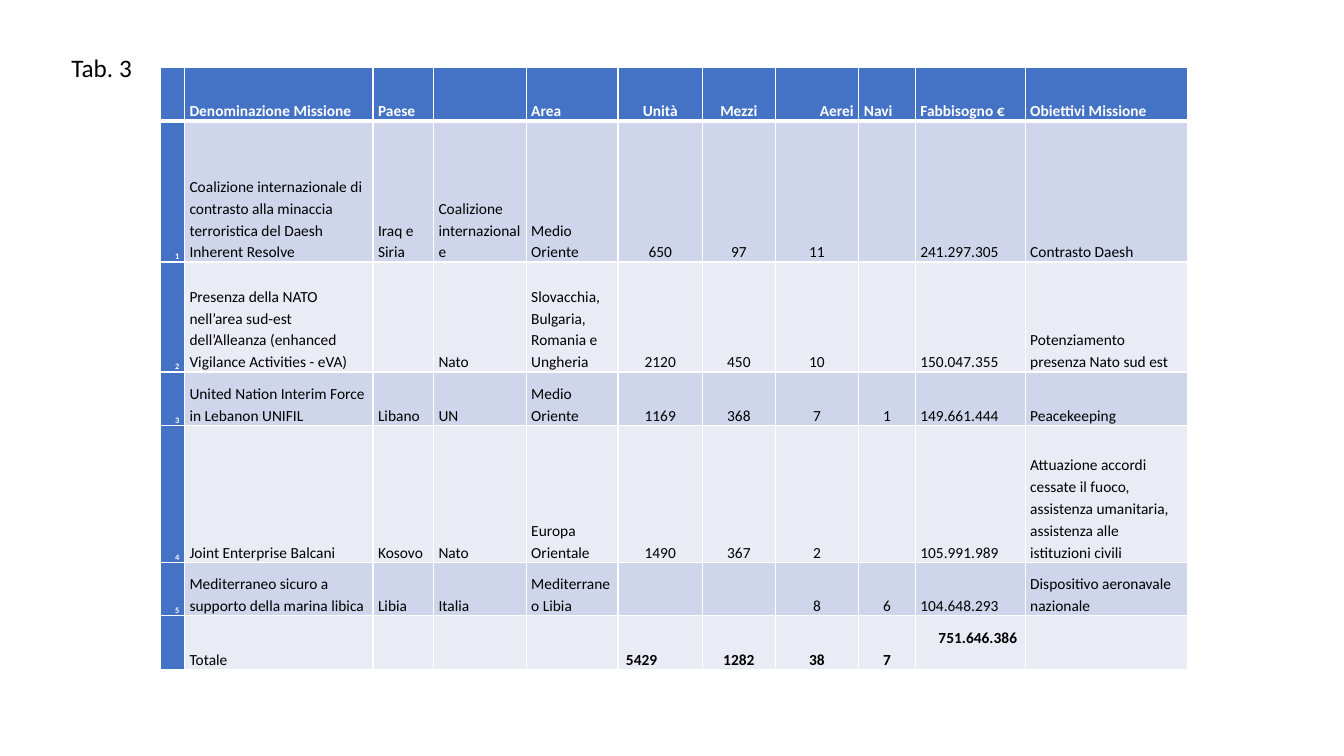
from lxml.etree import SubElement
from pptx import Presentation
from pptx.dml.color import RGBColor
from pptx.enum.text import MSO_ANCHOR, MSO_AUTO_SIZE, PP_ALIGN
from pptx.oxml.ns import qn
from pptx.util import Inches, Pt

WHITE = RGBColor(0xFF, 0xFF, 0xFF)
BLACK = RGBColor(0x00, 0x00, 0x00)
BLUE = RGBColor(0x44, 0x72, 0xC4)
BAND_DARK = RGBColor(0xCF, 0xD5, 0xEA)
BAND_LIGHT = RGBColor(0xE9, 0xEB, 0xF5)

COLUMN_WIDTHS = [0.22, 1.87, 0.6, 0.92, 0.91, 0.84, 0.72, 0.83, 0.56, 1.09, 1.61]
ROW_HEIGHTS = [0.53, 1.4, 1.09, 0.53, 1.36, 0.53, 0.53]
MISSIONS = [
    ["", "Denominazione Missione", "Paese", "", "Area", "Unità", "Mezzi", "Aerei",
     "Navi", "Fabbisogno €", "Obiettivi Missione"],
    ["1", "Coalizione internazionale di contrasto alla minaccia terroristica del Daesh Inherent Resolve",
     "Iraq e Siria", "Coalizione internazionale", "Medio Oriente", "650", "97", "11", "",
     "241.297.305", "Contrasto Daesh"],
    ["2", "Presenza della NATO nell’area sud-est dell’Alleanza (enhanced Vigilance Activities - eVA)",
     "", "Nato", "Slovacchia, Bulgaria, Romania e Ungheria", "2120", "450", "10", "",
     "150.047.355", "Potenziamento presenza Nato sud est"],
    ["3", "United Nation Interim Force in Lebanon UNIFIL", "Libano", "UN", "Medio Oriente",
     "1169", "368", "7", "1", "149.661.444", "Peacekeeping"],
    ["4", "Joint Enterprise Balcani", "Kosovo", "Nato", "Europa Orientale", "1490", "367",
     "2", "", "105.991.989",
     "Attuazione accordi cessate il fuoco, assistenza umanitaria, assistenza alle istituzioni civili"],
    ["5", "Mediterraneo sicuro a supporto della marina libica", "Libia", "Italia",
     "Mediterraneo Libia", "", "", "8", "6", "104.648.293", "Dispositivo aeronavale nazionale"],
    ["", "Totale", "", "", "", "5429", "1282", "38", "7", "751.646.386", ""],
]
TOTAL_ROW = len(MISSIONS) - 1
UNITS, AIRCRAFT, SHIPS, BUDGET = 5, 7, 8, 9
CELL_FORMAT = {
    "margin_left": Inches(0.05), "margin_right": Inches(0.05),
    "margin_top": 0, "margin_bottom": 0, "vertical_anchor": MSO_ANCHOR.BOTTOM,
}
# Two totals are set in from the left; the budget total also sits one line higher
TOTAL_FORMATS = {
    UNITS: {"margin_left": Inches(0.08)},
    BUDGET: {"margin_left": Inches(0.23), "margin_bottom": Inches(0.21)},
}


def add_text(paragraph, text, size, color, bold=False):
    run = paragraph.add_run()
    run.text = text
    font_format = {"name": "Calibri", "size": Pt(size), "bold": bold}
    for name, value in font_format.items():
        setattr(run.font, name, value)
    run.font.color.rgb = color


def add_borders(cell, top, bottom):
    properties = cell._tc.get_or_add_tcPr()
    for side, width in {"L": 1, "R": 1, "T": top, "B": bottom}.items():
        line = SubElement(properties, qn(f"a:ln{side}"), w=str(Pt(width)))
        SubElement(SubElement(line, qn("a:solidFill")), qn("a:srgbClr"), val=str(WHITE))


presentation = Presentation()
presentation.slide_width = Inches(13.33)
presentation.slide_height = Inches(7.5)
slide = presentation.slides.add_slide(presentation.slide_layouts[6])

# Table label
label = slide.shapes.add_textbox(Inches(0.61), Inches(0.47), Inches(1.36), Inches(0.4))
label.text_frame.word_wrap = True
label.text_frame.auto_size = MSO_AUTO_SIZE.SHAPE_TO_FIT_TEXT
add_text(label.text_frame.paragraphs[0], "Tab. 3", 18, BLACK)

# Table grid
table = slide.shapes.add_table(
    len(ROW_HEIGHTS), len(COLUMN_WIDTHS),
    Inches(1.59), Inches(0.67), Inches(10.16), Inches(5.98)).table
table.first_col = True
for column, width in zip(table.columns, COLUMN_WIDTHS):
    column.width = Inches(width)
for row, height in zip(table.rows, ROW_HEIGHTS):
    row.height = Inches(height)

# Cells
for row_index, values in enumerate(MISSIONS):
    for column_index, text in enumerate(values):
        cell = table.cell(row_index, column_index)
        is_header = row_index == 0
        is_number = column_index == 0
        is_total = row_index == TOTAL_ROW and UNITS <= column_index <= BUDGET

        add_borders(cell, top=3 if row_index == 1 else 1, bottom=3 if is_header else 1)
        cell.fill.solid()
        if is_header or is_number:
            cell.fill.fore_color.rgb = BLUE
        else:
            cell.fill.fore_color.rgb = BAND_DARK if row_index % 2 else BAND_LIGHT
        if not text:
            continue

        cell_format = dict(CELL_FORMAT)
        if is_total:
            cell_format.update(TOTAL_FORMATS.get(column_index, {}))
        for name, value in cell_format.items():
            setattr(cell, name, value)

        alignment = PP_ALIGN.LEFT
        if is_number or (is_header and column_index == AIRCRAFT):
            alignment = PP_ALIGN.RIGHT
        elif UNITS <= column_index <= SHIPS:
            alignment = PP_ALIGN.CENTER
        if (is_header and column_index == SHIPS) or (is_total and column_index == UNITS):
            alignment = PP_ALIGN.LEFT

        paragraph = cell.text_frame.paragraphs[0]
        paragraph_format = {"alignment": alignment, "line_spacing": 1.15, "space_after": Pt(10)}
        for name, value in paragraph_format.items():
            setattr(paragraph, name, value)
        add_text(paragraph, text, 6 if is_number else 11,
                 WHITE if is_header or is_number else BLACK,
                 bold=is_header or is_number or is_total)

presentation.save("out.pptx")
